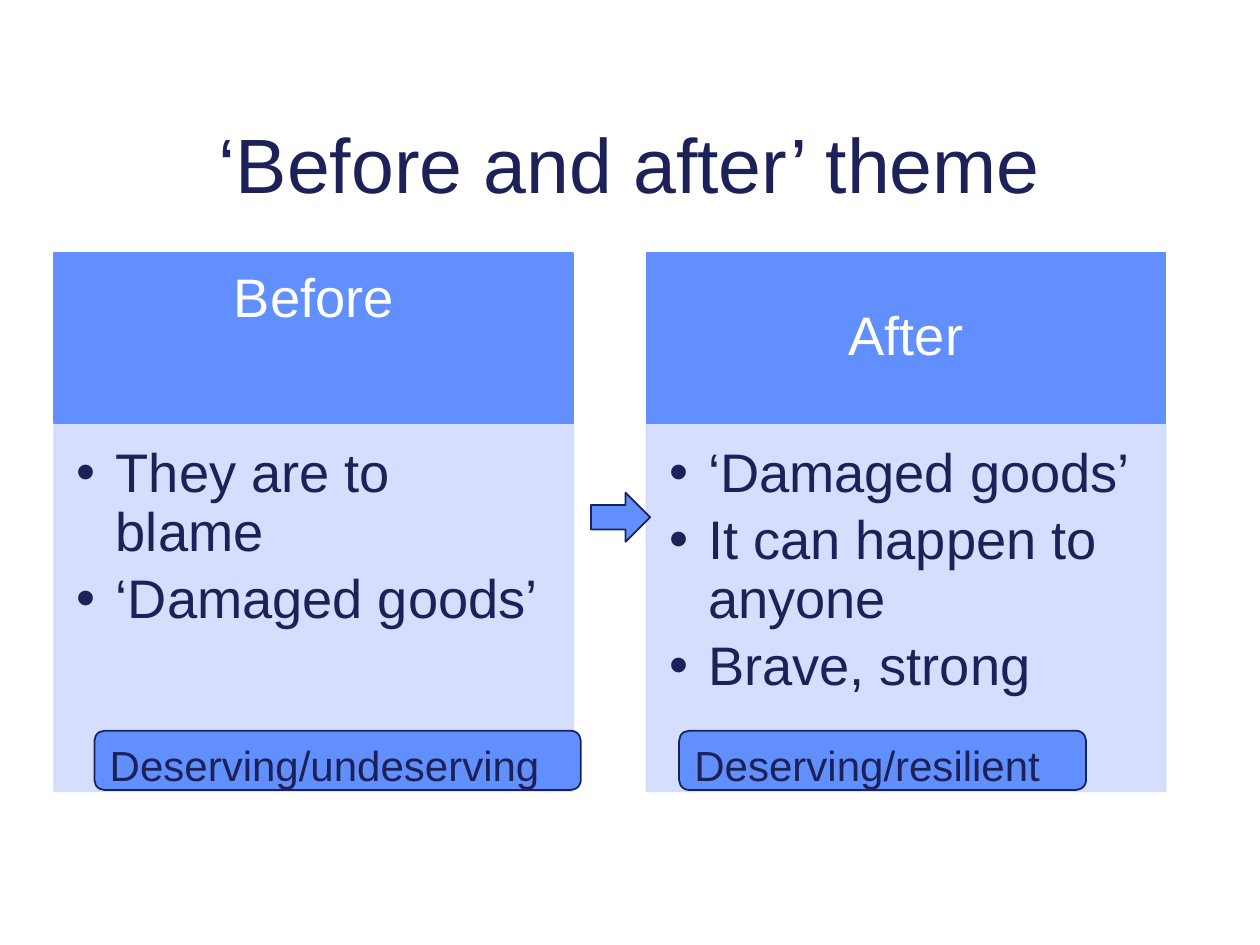
from lxml.etree import SubElement
from pptx import Presentation
from pptx.dml.color import RGBColor
from pptx.enum.shapes import MSO_SHAPE as SHAPE
from pptx.enum.text import MSO_ANCHOR as ANCHOR, MSO_AUTO_SIZE as AUTO, PP_ALIGN as ALIGN
from pptx.oxml.ns import qn
from pptx.util import Inches, Pt

NAVY = RGBColor(0x1C, 0x21, 0x57)
BLUE = RGBColor(0x61, 0x8F, 0xFD)
PALE = RGBColor(0xD2, 0xDB, 0xFE)
WHITE = RGBColor(0xFF, 0xFF, 0xFF)

TOP, HEAD_H, BODY_H, COL_W = 2.01, 1.35, 2.92, 4.12
LABEL_Y, LABEL_H = 5.8, 0.47

COLUMNS = [
    dict(x=0.43, head="Before", anchor=ANCHOR.TOP,
         items=["They are to blame", "‘Damaged goods’"],
         label="Deserving/undeserving", label_x=0.75, label_w=3.86),
    dict(x=5.13, head="After", anchor=ANCHOR.MIDDLE,
         items=["‘Damaged goods’", "It can happen to anyone", "Brave, strong"],
         label="Deserving/resilient", label_x=5.39, label_w=3.23),
]


def write(tf, lines, size, color=NAVY, align=ALIGN.LEFT, anchor=ANCHOR.TOP,
          insets=(0.1, 0.05, 0.1, 0.05), spacing=1.0, after=0, bullet=False):
    tf.word_wrap = True
    tf.auto_size = AUTO.NONE
    tf.vertical_anchor = anchor
    tf.margin_left, tf.margin_top, tf.margin_right, tf.margin_bottom = map(Inches, insets)
    for i, line in enumerate(lines):
        p = tf.paragraphs[0] if i == 0 else tf.add_paragraph()
        p.alignment = align
        p.line_spacing = spacing
        p.space_before = Pt(0)
        p.space_after = Pt(after)
        if bullet:
            pPr = p._p.get_or_add_pPr()
            pPr.set("marL", str(Inches(0.31)))
            pPr.set("indent", str(-Inches(0.31)))
            SubElement(pPr, qn("a:buChar"), char="•")
        r = p.add_run()
        r.text = line
        r.font.name = "Arial"
        r.font.size = Pt(size)
        r.font.color.rgb = color


class SlideBuilder:
    def __init__(self, s):
        self.s = s

    def place(self, sp, x, y, w, h):
        sp.left, sp.top, sp.width, sp.height = map(Inches, (x, y, w, h))

    def paint(self, sp, fill, line, alpha=None):
        sp.fill.solid()
        sp.fill.fore_color.rgb = fill
        sp.line.color.rgb = line
        sp.line.width = Pt(1)
        if alpha:
            for clr in sp._element.spPr.iter(qn("a:srgbClr")):
                SubElement(clr, qn("a:alpha"), val=str(alpha * 1000))

    def title(self, text):
        sp = self.s.shapes.title
        self.place(sp, 0.75, 0.67, 8.5, 1.25)
        write(sp.text_frame, [text], 44, align=ALIGN.CENTER, anchor=ANCHOR.MIDDLE)

    def bullets(self, idx, items, x, y, w, h):
        sp = self.s.placeholders[idx]
        self.place(sp, x, y, w, h)
        self.paint(sp, PALE, PALE, alpha=90)
        write(sp.text_frame, items, 31, insets=(0.18, 0.18, 0.24, 0.27),
              spacing=0.9, after=4.65, bullet=True)

    def shape(self, kind, x, y, w, h, line=NAVY):
        sp = self.s.shapes.add_shape(kind, *map(Inches, (x, y, w, h)))
        sp.shadow.inherit = False
        self.paint(sp, BLUE, line)
        return sp

    def header(self, text, anchor, x, y, w, h):
        sp = self.shape(SHAPE.RECTANGLE, x, y, w, h, line=BLUE)
        write(sp.text_frame, [text], 31, WHITE, ALIGN.CENTER, anchor,
              insets=(0.24, 0.14, 0.24, 0.14), spacing=0.9)

    def label(self, text, x, y, w, h):
        sp = self.shape(SHAPE.ROUNDED_RECTANGLE, x, y, w, h)
        write(sp.text_frame, [text], 24)


def main():
    prs = Presentation()
    prs.slide_width, prs.slide_height = Inches(10), Inches(7.5)
    b = SlideBuilder(prs.slides.add_slide(prs.slide_layouts[3]))
    b.title("‘Before and after’ theme")
    for idx, col in enumerate(COLUMNS, start=1):
        b.header(col["head"], col["anchor"], col["x"], TOP, COL_W, HEAD_H)
        b.bullets(idx, col["items"], col["x"], TOP + HEAD_H, COL_W, BODY_H)
        b.label(col["label"], col["label_x"], LABEL_Y, col["label_w"], LABEL_H)
    b.shape(SHAPE.RIGHT_ARROW, 4.69, 3.91, 0.47, 0.39)
    prs.save("out.pptx")


if __name__ == "__main__":
    main()
